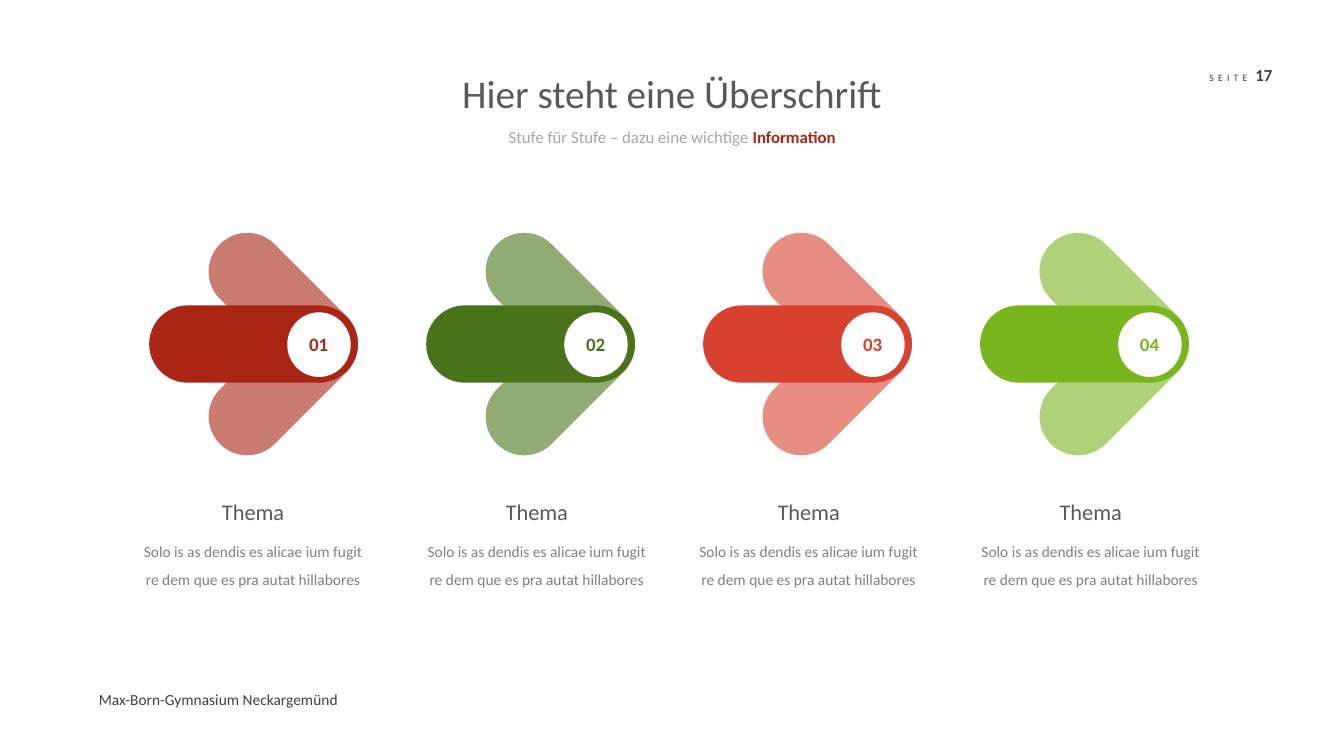
from lxml.etree import SubElement
from pptx import Presentation
from pptx.dml.color import RGBColor
from pptx.enum.shapes import MSO_SHAPE
from pptx.enum.text import MSO_AUTO_SIZE, PP_ALIGN
from pptx.oxml.ns import qn
from pptx.util import Cm, Pt

COLORS = {
    "white": "FFFFFF", "dark": "404040", "heading": "595959",
    "body": "808080", "muted": "A6A6A6", "darkred": "A92615",
    "darkgreen": "487319", "red": "D7412E", "green": "79B51D",
}


def rgb(name):
    return RGBColor.from_string(COLORS[name])


class Deck:
    FONT = "Calibri"

    def __init__(self, width, height):
        self.prs = Presentation()
        self.prs.slide_width, self.prs.slide_height = Cm(width), Cm(height)
        self.s = self.prs.slides.add_slide(self.prs.slide_layouts[6])

    def shape(self, kind, x, y, w, h, color, alpha=None, rotation=0):
        sp = self.s.shapes.add_shape(kind, Cm(x), Cm(y), Cm(w), Cm(h))
        sp.shadow.inherit = False
        sp.line.fill.background()
        sp.fill.solid()
        sp.fill.fore_color.rgb = rgb(color)
        sp.rotation = rotation
        if alpha:
            clr = sp._element.spPr.find(qn("a:solidFill"))[0]
            SubElement(clr, qn("a:alpha"), val=str(alpha * 1000))
        return sp

    def capsule(self, cx, cy, w, h, color, **style):
        sp = self.shape(MSO_SHAPE.ROUNDED_RECTANGLE, cx - w / 2, cy - h / 2,
                        w, h, color, **style)
        sp.adjustments[0] = 0.5

    def text(self, x, y, w, h, runs, size, color, align=PP_ALIGN.CENTER,
             bold=False, wrap=False, spacing=None):
        """Add one paragraph; runs is a list of strings."""
        tf = self.s.shapes.add_textbox(Cm(x), Cm(y), Cm(w), Cm(h)).text_frame
        tf.word_wrap = wrap
        tf.auto_size = MSO_AUTO_SIZE.SHAPE_TO_FIT_TEXT
        p = tf.paragraphs[0]
        p.alignment = align
        if spacing:
            p.line_spacing = spacing
        for content in runs:
            p.add_run().text = content
        p.font.name, p.font.size, p.font.bold = self.FONT, Pt(size), bold
        p.font.color.rgb = rgb(color)
        return p.runs


def main():
    deck = Deck(33.87, 19.05)

    # Page number and footer
    label, _, number = deck.text(30.23, 1.5, 2.44, 0.76, ["SEITE", " ", "17"],
                                 12, "dark", PP_ALIGN.LEFT)
    label.font.size = Pt(7)
    label._r.get_or_add_rPr().set("spc", "300")
    number.font.bold = True
    deck.text(2.24, 17.27, 6.58, 0.74, ["Max-Born-Gymnasium Neckargemünd"],
              11, "dark", PP_ALIGN.LEFT)

    # Title and subtitle
    deck.text(11.38, 1.63, 11.1, 1.45, ["Hier steht eine Überschrift"],
              28, "heading")
    _, keyword = deck.text(
        12.52, 3.07, 8.84, 0.76,
        ["Stufe für Stufe – dazu eine wichtige ", "Information"], 12, "muted")
    keyword.font.bold = True
    keyword.font.color.rgb = rgb("darkred")

    # Arrows: a bar, two translucent wings and a numbered disc
    left, step, middle = 3.76, 6.98, 8.67
    bar_w, bar_h = 5.26, 1.95
    for i, color in enumerate(["darkred", "darkgreen", "red", "green"]):
        x = left + i * step
        deck.capsule(x + bar_w / 2, middle, bar_w, bar_h, color)
        for side in (1, -1):
            deck.capsule(x + 3.38, middle + side * 0.92, 4.52, bar_h, color,
                         alpha=60, rotation=-45 * side)
        deck.shape(MSO_SHAPE.OVAL, x + 3.48, 7.87, 1.6, 1.63, "white")
        deck.text(x + 3.78, 8.26, 1.07, 0.84, [f"{i + 1:02}"], 13.5, color,
                  PP_ALIGN.LEFT, bold=True)

    # Captions
    for center in (6.38, 13.53, 20.38, 27.49):
        deck.text(center - 1.04, 12.42, 2.08, 0.94, ["Thema"], 16, "heading")
        deck.text(center - 3.06, 13.31, 6.12, 1.6,
                  ["Solo is as dendis es alicae ium fugit "
                   "re dem que es pra autat hillabores"],
                  11, "body", wrap=True, spacing=1.5)

    deck.prs.save("out.pptx")


if __name__ == "__main__":
    main()
